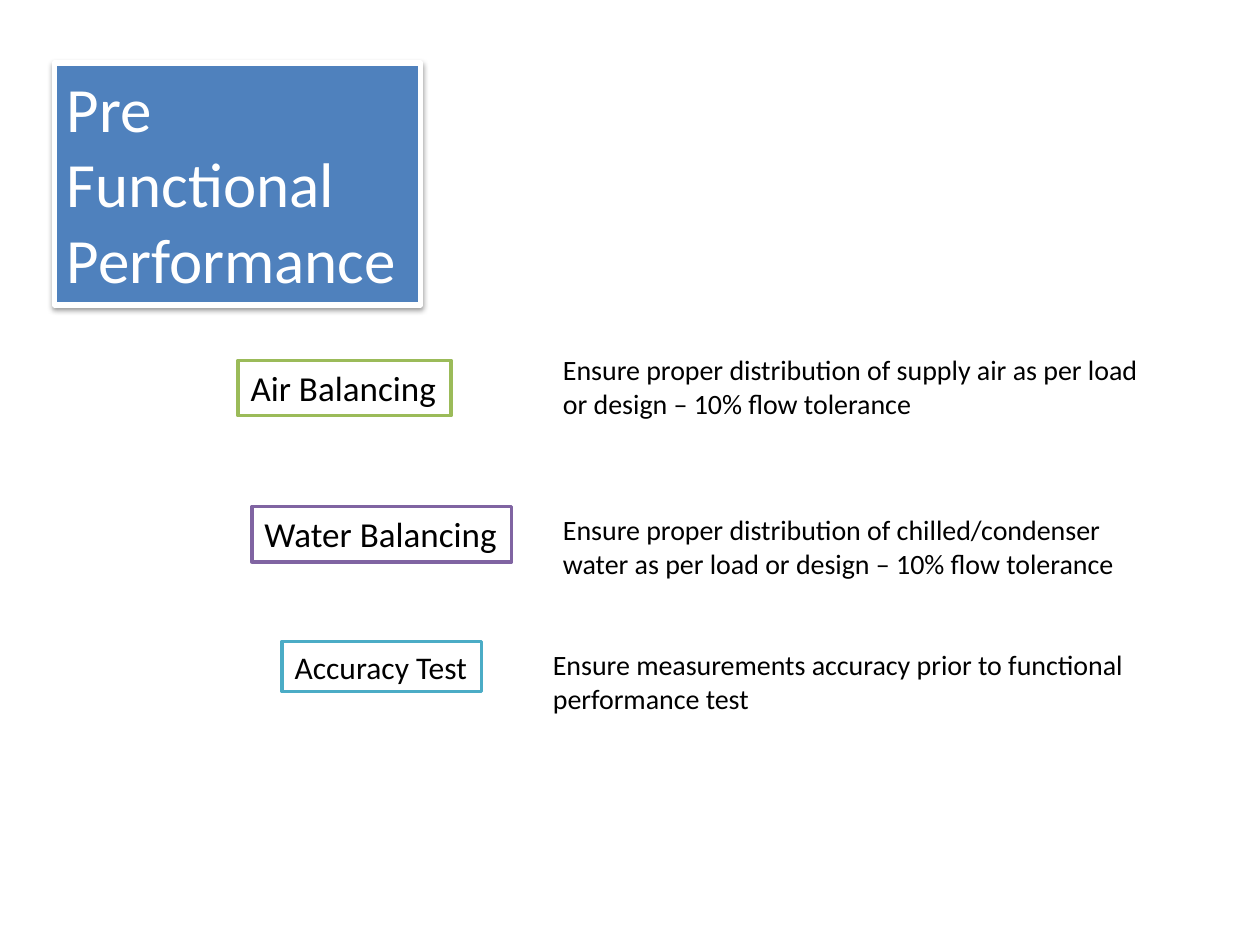
from dataclasses import dataclass

from lxml.etree import SubElement
from pptx import Presentation
from pptx.dml.color import RGBColor as RGB
from pptx.enum.shapes import MSO_SHAPE as SHAPE
from pptx.enum.text import MSO_ANCHOR as ANCHOR, MSO_AUTO_SIZE as FIT, PP_ALIGN as ALIGN
from pptx.oxml.ns import qn
from pptx.util import Inches, Pt


@dataclass(frozen=True)
class Theme:
    font: str = "Calibri"
    white: str = "FFFFFF"
    black: str = "000000"
    blue: str = "4F81BD"
    green: str = "9BBB59"
    purple: str = "8064A2"
    teal: str = "4BACC6"
    title_size: int = 36
    label_size: int = 20
    small_label_size: int = 18
    body_size: int = 16


class SlideBuilder:
    def __init__(self, slide, theme):
        self.slide = slide
        self.theme = theme

    def set_text(self, sp, text, size, color, wrap=True):
        tf = sp.text_frame
        tf.text = text
        tf.word_wrap = wrap
        tf.auto_size = FIT.SHAPE_TO_FIT_TEXT
        tf.vertical_anchor = ANCHOR.TOP
        p = tf.paragraphs[0]
        p.alignment = ALIGN.LEFT
        font = p.runs[0].font
        font.name, font.size = self.theme.font, Pt(size)
        font.color.rgb = RGB.from_string(color)

    def paint(self, sp, fill, line, width):
        sp.fill.solid()
        sp.fill.fore_color.rgb = RGB.from_string(fill)
        sp.line.color.rgb = RGB.from_string(line)
        sp.line.width = Pt(width)
        sp.shadow.inherit = False

    def drop_shadow(self, sp):
        effects = sp._element.spPr.find(qn("a:effectLst"))
        shadow = SubElement(effects, qn("a:outerShdw"), blurRad=str(Pt(3.1)),
                            dist=str(Pt(1.6)), dir="5400000", rotWithShape="0")
        color = SubElement(shadow, qn("a:srgbClr"), val=self.theme.black)
        SubElement(color, qn("a:alpha"), val="38000")

    def title(self, text, left, top, width, height):
        sp = self.slide.shapes.title
        sp.left, sp.top = Inches(left), Inches(top)
        sp.width, sp.height = Inches(width), Inches(height)
        self.paint(sp, self.theme.blue, self.theme.white, 3)
        self.drop_shadow(sp)
        self.set_text(sp, text, self.theme.title_size, self.theme.white)

    def label(self, text, left, top, width, height, color, size):
        sp = self.slide.shapes.add_shape(
            SHAPE.RECTANGLE, Inches(left), Inches(top), Inches(width), Inches(height))
        self.paint(sp, self.theme.white, color, 2)
        self.set_text(sp, text, size, self.theme.black, wrap=False)

    def description(self, text, left, top):
        sp = self.slide.shapes.add_textbox(
            Inches(left), Inches(top), Inches(4.96), Inches(0.64))
        self.set_text(sp, text, self.theme.body_size, self.theme.black)


def main():
    prs = Presentation()
    prs.slide_width, prs.slide_height = Inches(10), Inches(7.5)
    theme = Theme()
    s = SlideBuilder(prs.slides.add_slide(prs.slide_layouts[5]), theme)

    # Title block
    s.title("Pre Functional Performance", 0.43, 0.5, 2.91, 1.92)

    # Outlined test names: text, left, top, width, height, colour, size
    labels = [
        ("Air Balancing", 1.89, 2.86, 1.69, 0.44, theme.green, theme.label_size),
        ("Water Balancing", 2, 4.02, 2.06, 0.44, theme.purple, theme.label_size),
        ("Accuracy Test", 2.24, 5.09, 1.58, 0.4, theme.teal, theme.small_label_size),
    ]
    for label in labels:
        s.label(*label)

    # Purpose of each test: text, left, top
    descriptions = [
        ("Ensure proper distribution of supply air as per load or design "
         "– 10% flow tolerance", 4.37, 2.75),
        ("Ensure proper distribution of chilled/condenser water as per load or design "
         "– 10% flow tolerance", 4.37, 4.02),
        ("Ensure measurements accuracy prior to functional performance test", 4.29, 5.09),
    ]
    for description in descriptions:
        s.description(*description)

    prs.save("out.pptx")


if __name__ == "__main__":
    main()
